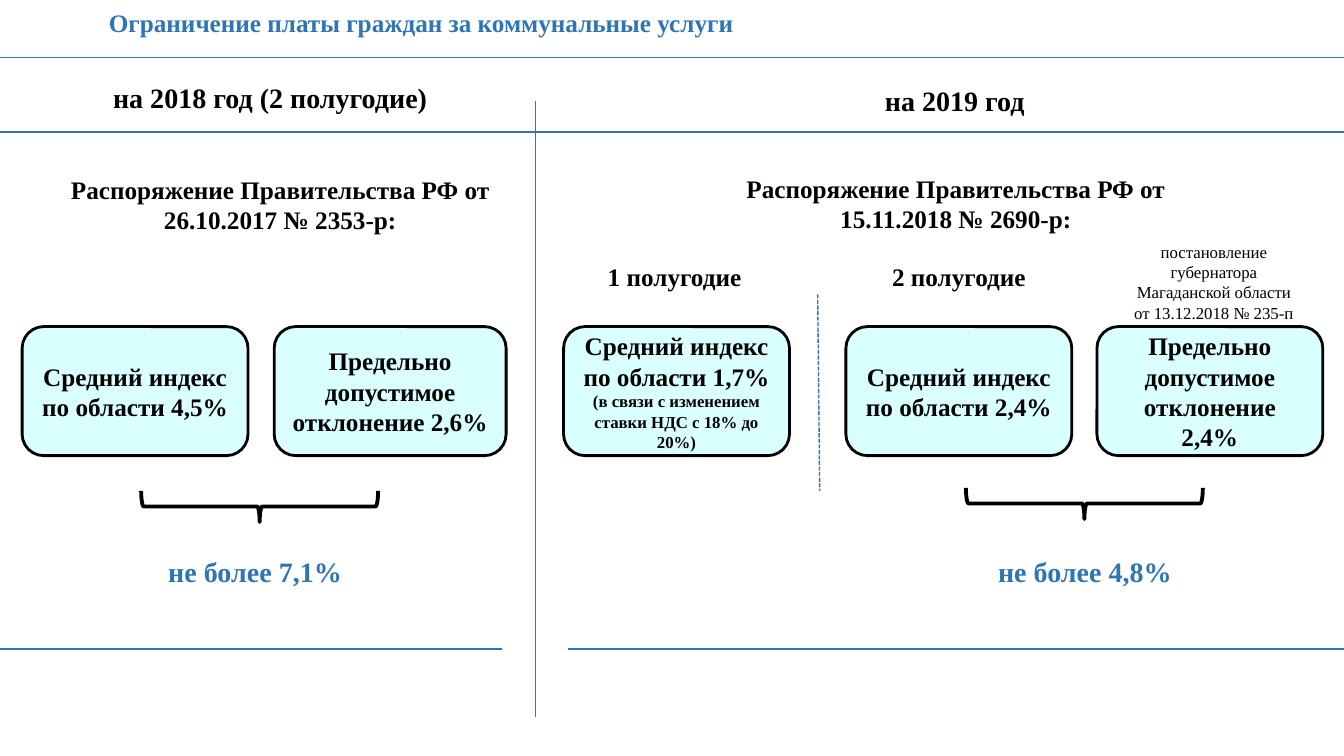
from dataclasses import dataclass

from lxml import etree
from pptx import Presentation
from pptx.dml.color import RGBColor
from pptx.enum.dml import MSO_LINE
from pptx.enum.shapes import MSO_CONNECTOR as Connector, MSO_SHAPE as Shape
from pptx.enum.text import MSO_ANCHOR as Anchor, PP_ALIGN as Align
from pptx.oxml.ns import qn
from pptx.util import Inches, Pt


@dataclass(frozen=True)
class Theme:
    font: str = "Times New Roman"
    accent: RGBColor = RGBColor(0x2E, 0x75, 0xB6)
    ink: RGBColor = RGBColor(0, 0, 0)
    card: RGBColor = RGBColor(0xD9, 0xFF, 0xFF)
    heading: int = 20
    body: int = 18
    note: int = 12
    rule: float = 1
    card_line: float = 2
    brace_line: float = 2.75


@dataclass(frozen=True)
class Box:
    left: float
    top: float
    width: float
    height: float

    def inner(self, left, top, width, height):
        """Box whose place is given relative to this one."""
        return Box(self.left + left, self.top + top, width, height)

    def lengths(self):
        return [Inches(n) for n in (self.left, self.top, self.width, self.height)]


THEME = Theme()
SLIDE = Box(0, 0, 13.33, 7.5)
DIVIDER = 5.31
CARD_TOP, CARD_HEIGHT = 3.24, 1.28


def write(frame, *lines, size=THEME.body, color=THEME.ink, bold=True,
          align=Align.CENTER, anchor=Anchor.TOP, indent=0.1):
    """Each line is a text, or a (text, size) pair, and makes one paragraph."""
    frame.word_wrap = True
    frame.vertical_anchor = anchor
    frame.margin_left = Inches(indent)
    for index, line in enumerate(lines):
        text, line_size = line if isinstance(line, tuple) else (line, size)
        paragraph = frame.add_paragraph() if index else frame.paragraphs[0]
        paragraph.alignment = align
        run = paragraph.add_run()
        run.text = text
        run.font.name = THEME.font
        run.font.size = Pt(line_size)
        run.font.bold = bold
        run.font.color.rgb = color


def add_label(slide, box, text, **style):
    write(slide.shapes.add_textbox(*box.lengths()).text_frame, text, **style)


def add_rule(slide, x1, y1, x2, y2, dash=None):
    rule = slide.shapes.add_connector(
        Connector.STRAIGHT, Inches(x1), Inches(y1), Inches(x2), Inches(y2))
    rule.line.color.rgb = THEME.accent
    rule.line.width = Pt(THEME.rule)
    if dash:
        rule.line.dash_style = dash
    etree.SubElement(rule._element.spPr, qn("a:effectLst"))


def add_card(slide, box, *lines):
    card = slide.shapes.add_shape(Shape.ROUNDED_RECTANGLE, *box.lengths())
    card.shadow.inherit = False
    card.fill.solid()
    card.fill.fore_color.rgb = THEME.card
    card.line.color.rgb = THEME.ink
    card.line.width = Pt(THEME.card_line)
    write(card.text_frame, *lines, anchor=Anchor.MIDDLE)


def add_brace(slide, box):
    """Brace pointing down; box is its frame before the quarter turn."""
    brace = slide.shapes.add_shape(Shape.RIGHT_BRACE, *box.lengths())
    brace.rotation = 90
    brace.shadow.inherit = False
    brace.fill.background()
    brace.line.color.rgb = THEME.ink
    brace.line.width = Pt(THEME.brace_line)


def add_total(slide, box, text):
    add_label(slide, box, text, size=THEME.heading, color=THEME.accent)


def draw_frame(slide, box):
    """Title and the rules that part the two years."""
    add_label(slide, box.inner(0.22, 0.02, 12.49, 0.4),
              "Ограничение платы граждан за коммунальные услуги",
              color=THEME.accent, align=Align.LEFT, indent=0.86)
    right = box.left + box.width
    for y in (0.57, 1.31):
        add_rule(slide, box.left, box.top + y, right, box.top + y)
    divider = box.left + DIVIDER
    add_rule(slide, divider, box.top + 1, divider, box.top + 7.11)
    for start, end in ((box.left, box.left + 4.98), (box.left + 5.63, right)):
        add_rule(slide, start, box.top + 6.44, end, box.top + 6.44)


def draw_year_2018(slide, box):
    add_label(slide, box.inner(0.38, 0.75, 4.6, 0.44), "на 2018 год (2 полугодие)",
              size=THEME.heading)
    add_label(slide, box.inner(0.45, 1.68, 4.66, 0.71),
              "Распоряжение Правительства РФ от 26.10.2017 № 2353-р:")
    add_card(slide, box.inner(0.22, CARD_TOP, 2.24, CARD_HEIGHT),
             "Средний индекс по области 4,5%")
    add_card(slide, box.inner(2.72, CARD_TOP, 2.3, CARD_HEIGHT),
             "Предельно допустимое отклонение 2,6%")
    add_brace(slide, box.inner(2.42, 3.85, 0.31, 2.35))
    add_total(slide, box.inner(0.79, 5.45, 3.48, 0.44), "не более 7,1%")


def draw_year_2019(slide, box):
    add_label(slide, box.inner(1.9, 0.78, 4.52, 0.44), "на 2019 год", size=THEME.heading)
    add_label(slide, box.inner(1.84, 1.67, 4.66, 0.71),
              "Распоряжение Правительства РФ от 15.11.2018 № 2690-р:")
    for left, half_year in ((0.29, "1 полугодие"), (3.11, "2 полугодие")):
        add_label(slide, box.inner(left, 2.54, 2.18, 0.4), half_year)
    add_label(slide, box.inner(5.77, 2.35, 1.92, 0.91),
              "постановление губернатора Магаданской области от 13.12.2018 № 235-п",
              size=THEME.note, bold=False)
    add_rule(slide, box.left + 2.8, box.top + 2.92, box.left + 2.82, box.top + 4.87,
             dash=MSO_LINE.SQUARE_DOT)
    cards = (
        (0.28, ["Средний индекс по области 1,7%",
                ("(в связи с изменением ставки НДС с 18% до 20%)", THEME.note)]),
        (3.08, ["Средний индекс по области 2,4%"]),
        (5.57, ["Предельно допустимое отклонение 2,4%"]),
    )
    for left, lines in cards:
        add_card(slide, box.inner(left, CARD_TOP, 2.24, CARD_HEIGHT), *lines)
    add_brace(slide, box.inner(5.29, 3.82, 0.31, 2.35))
    add_total(slide, box.inner(3.71, 5.45, 3.48, 0.44), "не более 4,8%")


def main():
    deck = Presentation()
    deck.slide_width, deck.slide_height = Inches(SLIDE.width), Inches(SLIDE.height)
    slide = deck.slides.add_slide(deck.slide_layouts[6])
    draw_frame(slide, SLIDE)
    draw_year_2018(slide, SLIDE.inner(0, 0, DIVIDER, SLIDE.height))
    draw_year_2019(slide, SLIDE.inner(DIVIDER, 0, SLIDE.width - DIVIDER, SLIDE.height))
    deck.save("out.pptx")


if __name__ == "__main__":
    main()
